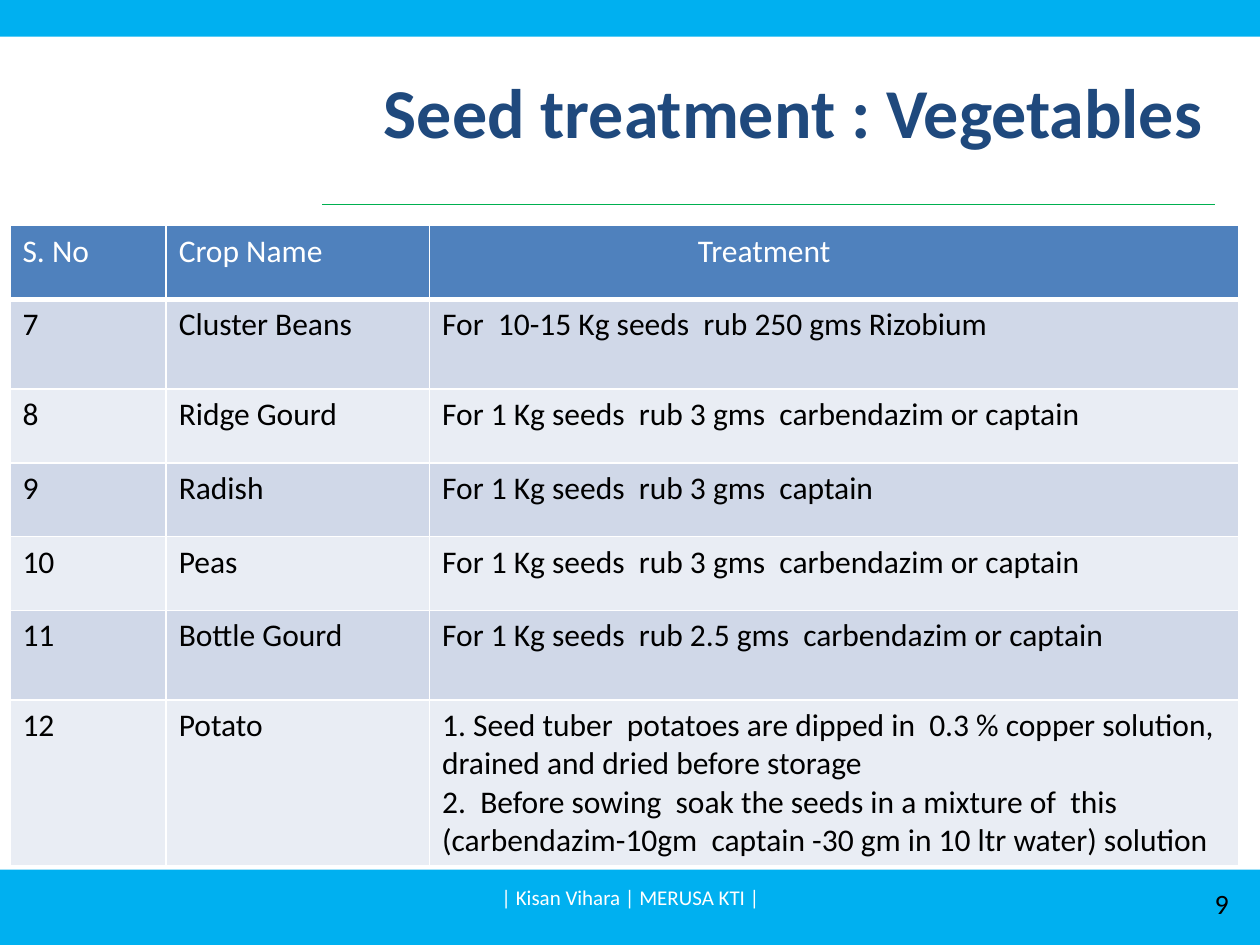
import pptx
import pptx.dml.color
import pptx.enum.shapes
import pptx.enum.text
import pptx.oxml
import pptx.oxml.ns
import pptx.util
from pptx.util import Cm

COLORS = {
    "band": "00B0F0", "rule": "00B050", "title": "1F497D", "header": "4F81BD",
    "odd": "D0D8E8", "even": "E9EDF4", "white": "FFFFFF", "black": "000000",
}
ALIGN = pptx.enum.text.PP_ALIGN
ANCHOR = pptx.enum.text.MSO_ANCHOR


def rgb(name):
    return pptx.dml.color.RGBColor.from_string(COLORS[name])


def style(paragraph, size, color, bold=False):
    for run in paragraph.runs:
        run.font.name = "Calibri"
        run.font.size = pptx.util.Pt(size)
        run.font.bold = bold
        run.font.color.rgb = rgb(color)


deck = pptx.Presentation()
deck.slide_width, deck.slide_height = Cm(25.4), Cm(19.05)
slide = deck.slides.add_slide(deck.slide_layouts[6])

# Bands at the bottom and top, and the rule under the title
for top, height in [(17.53, 1.52), (0, 0.74)]:
    band = slide.shapes.add_shape(pptx.enum.shapes.MSO_SHAPE.RECTANGLE,
                                  Cm(0), Cm(top), deck.slide_width, Cm(height))
    band.shadow.inherit = False
    band.fill.solid()
    band.fill.fore_color.rgb = rgb("band")
    band.line.fill.background()

rule = slide.shapes.add_connector(pptx.enum.shapes.MSO_CONNECTOR.STRAIGHT,
                                  Cm(6.5), Cm(4.12), Cm(24.5), Cm(4.12))
rule.line.color.rgb = rgb("rule")
rule.line.width = pptx.util.Pt(0.75)
rule._element.spPr.append(pptx.oxml.parse_xml(
    f'<a:effectLst {pptx.oxml.ns.nsdecls("a")}/>'))

# Title, footer and page number
for text, left, top, width, height, align, size, color, bold in [
    ("Seed treatment : Vegetables", 7.42, 0.64, 17.14, 3.18, ALIGN.CENTER, 40, "title", True),
    ("| Kisan Vihara | MERUSA KTI |", 8.69, 17.58, 8.05, 1.02, ALIGN.CENTER, 12, "white", False),
    ("9", 19.1, 17.7, 5.92, 1.02, ALIGN.RIGHT, 16, "black", False),
]:
    label = slide.shapes.add_textbox(Cm(left), Cm(top), Cm(width), Cm(height)).text_frame
    label.word_wrap = True
    label.vertical_anchor = ANCHOR.MIDDLE
    label.text = text
    label.paragraphs[0].alignment = align
    style(label.paragraphs[0], size, color, bold)

# Treatment table
crops = [
    ("S. No", "Crop Name", "Treatment"),
    ("7", "Cluster Beans", "For  10-15 Kg seeds  rub 250 gms Rizobium"),
    ("8", "Ridge Gourd", "For 1 Kg seeds  rub 3 gms  carbendazim or captain"),
    ("9", "Radish", "For 1 Kg seeds  rub 3 gms  captain"),
    ("10", "Peas", "For 1 Kg seeds  rub 3 gms  carbendazim or captain"),
    ("11", "Bottle Gourd", "For 1 Kg seeds  rub 2.5 gms  carbendazim or captain"),
    ("12", "Potato",
     "1. Seed tuber  potatoes are dipped in  0.3 % copper solution, "
     "drained and dried before storage\n"
     "2.  Before sowing  soak the seeds in a mixture of  this "
     "(carbendazim-10gm  captain -30 gm in 10 ltr water) solution"),
]
column_widths = [3.15, 5.31, 16.31]
row_heights = [1.49, 1.8, 1.49, 1.49, 1.49, 1.8, 3.35]
treatments = slide.shapes.add_table(
    len(crops), len(column_widths), Cm(0.2), Cm(4.55),
    Cm(sum(column_widths)), Cm(sum(row_heights))).table
for column, width in zip(treatments.columns, column_widths):
    column.width = Cm(width)
for row, height in zip(treatments.rows, row_heights):
    row.height = Cm(height)

for r, crop in enumerate(crops):
    fill = "header" if r == 0 else "odd" if r % 2 else "even"
    for c, text in enumerate(crop):
        cell = treatments.cell(r, c)
        cell.text_frame.text = text
        for paragraph in cell.text_frame.paragraphs:
            style(paragraph, 18, "black" if r else "white")
        for side in ("lnL", "lnR", "lnT", "lnB"):
            points = 3 if (r, side) in [(0, "lnB"), (1, "lnT")] else 1
            cell._tc.get_or_add_tcPr().append(pptx.oxml.parse_xml(
                f'<a:{side} {pptx.oxml.ns.nsdecls("a")} w="{pptx.util.Pt(points)}">'
                f'<a:solidFill><a:srgbClr val="{COLORS["white"]}"/></a:solidFill></a:{side}>'))
        cell.fill.solid()
        cell.fill.fore_color.rgb = rgb(fill)
treatments.cell(0, 2).margin_left = Cm(5.41)

deck.save("out.pptx")
